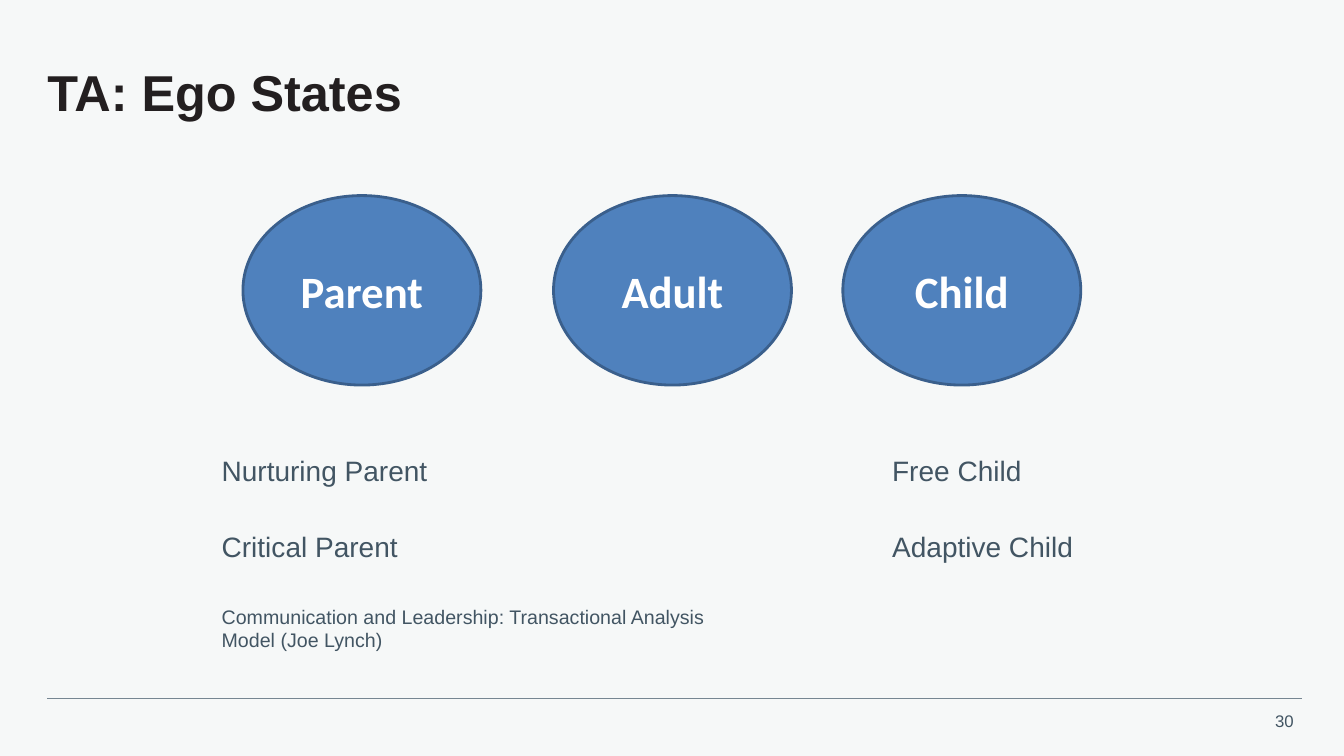
import pptx
import pptx.util
import pptx.dml.color
import pptx.enum.shapes
import pptx.enum.text
import pptx.oxml

RGB = pptx.dml.color.RGBColor
ALIGN = pptx.enum.text.PP_ALIGN
ANCHOR = pptx.enum.text.MSO_ANCHOR
SHAPE = pptx.enum.shapes.MSO_SHAPE

PX = 9144  # 100 px to the inch
PAPER = RGB(0xF6, 0xF8, 0xF8)
INK = RGB(0x23, 0x1F, 0x20)
SLATE = RGB(0x42, 0x55, 0x63)
RULE = RGB(0x76, 0x86, 0x92)
BLUE = RGB(0x4F, 0x81, 0xBD)
EDGE = RGB(0x3A, 0x5F, 0x8C)
WHITE = RGB(0xFF, 0xFF, 0xFF)

TITLE = "TA: Ego States"
STATES = [("Parent", 241), ("Adult", 549), ("Child", 836)]
KINDS = [
    (210, ["Nurturing Parent", "Critical Parent"]),
    (875, ["Free Child", "Adaptive Child"]),
]
SOURCE = "Communication and Leadership: Transactional Analysis Model (Joe Lynch)"
PAGE = "30"
OVAL_TOP, OVAL_W, OVAL_H = 194, 236, 188
KIND_TOP, KIND_STEP, KIND_W, KIND_H = 445, 75, 308, 44


def emu(*lengths):
    return [round(n * PX) for n in lengths]


def write(shape, text, size=20, color=SLATE, font="Arial", bold=False,
          align=ALIGN.LEFT, anchor=ANCHOR.TOP, inset=(10, 5), wrap=True,
          spacing=None):
    frame = shape.text_frame
    frame.word_wrap = wrap
    frame.vertical_anchor = anchor
    side, edge = emu(*inset)
    frame.margin_left = frame.margin_right = side
    frame.margin_top = frame.margin_bottom = edge
    para = frame.paragraphs[0]
    para.alignment = align
    para.line_spacing = spacing
    run = para.add_run()
    run.text = text
    run.font.name = font
    run.font.size = pptx.util.Pt(size)
    run.font.bold = bold
    run.font.color.rgb = color


def label(slide, text, box, **form):
    write(slide.shapes.add_textbox(*emu(*box)), text, **form)


def oval(slide, text, left):
    shape = slide.shapes.add_shape(
        SHAPE.OVAL, *emu(left, OVAL_TOP, OVAL_W, OVAL_H))
    shape.shadow.inherit = False
    shape.fill.solid()
    shape.fill.fore_color.rgb = BLUE
    shape.line.color.rgb = EDGE
    shape.line.width = pptx.util.Pt(2)
    write(shape, text, size=32, color=WHITE, font="Calibri", bold=True,
          align=ALIGN.CENTER, anchor=ANCHOR.MIDDLE)


def rule(slide, left, right, top):
    line = slide.shapes.add_connector(
        pptx.enum.shapes.MSO_CONNECTOR.STRAIGHT, *emu(left, top, right, top))
    line.line.color.rgb = RULE
    line.line.width = pptx.util.Pt(0.5)
    props = line._element.spPr
    props.append(props.makeelement(pptx.oxml.ns.qn("a:effectLst"), {}))


def main():
    deck = pptx.Presentation()
    deck.slide_width, deck.slide_height = emu(1333, 750)
    slide = deck.slides.add_slide(deck.slide_layouts[6])
    slide.background.fill.solid()
    slide.background.fill.fore_color.rgb = PAPER

    rule(slide, 47, 1291, 693)
    label(slide, PAGE, (1252, 700, 41, 30), size=12, align=ALIGN.RIGHT,
          wrap=False)
    label(slide, TITLE, (47, 47, 1247, 95), size=36, color=INK, bold=True,
          anchor=ANCHOR.MIDDLE, inset=(0, 0), spacing=0.9)
    for name, left in STATES:
        oval(slide, name, left)
    for left, names in KINDS:
        for row, name in enumerate(names):
            top = KIND_TOP + row * KIND_STEP
            label(slide, name, (left, top, KIND_W, KIND_H))
    label(slide, SOURCE, (210, 595, 516, 76), size=14)
    deck.save("out.pptx")


if __name__ == "__main__":
    main()
